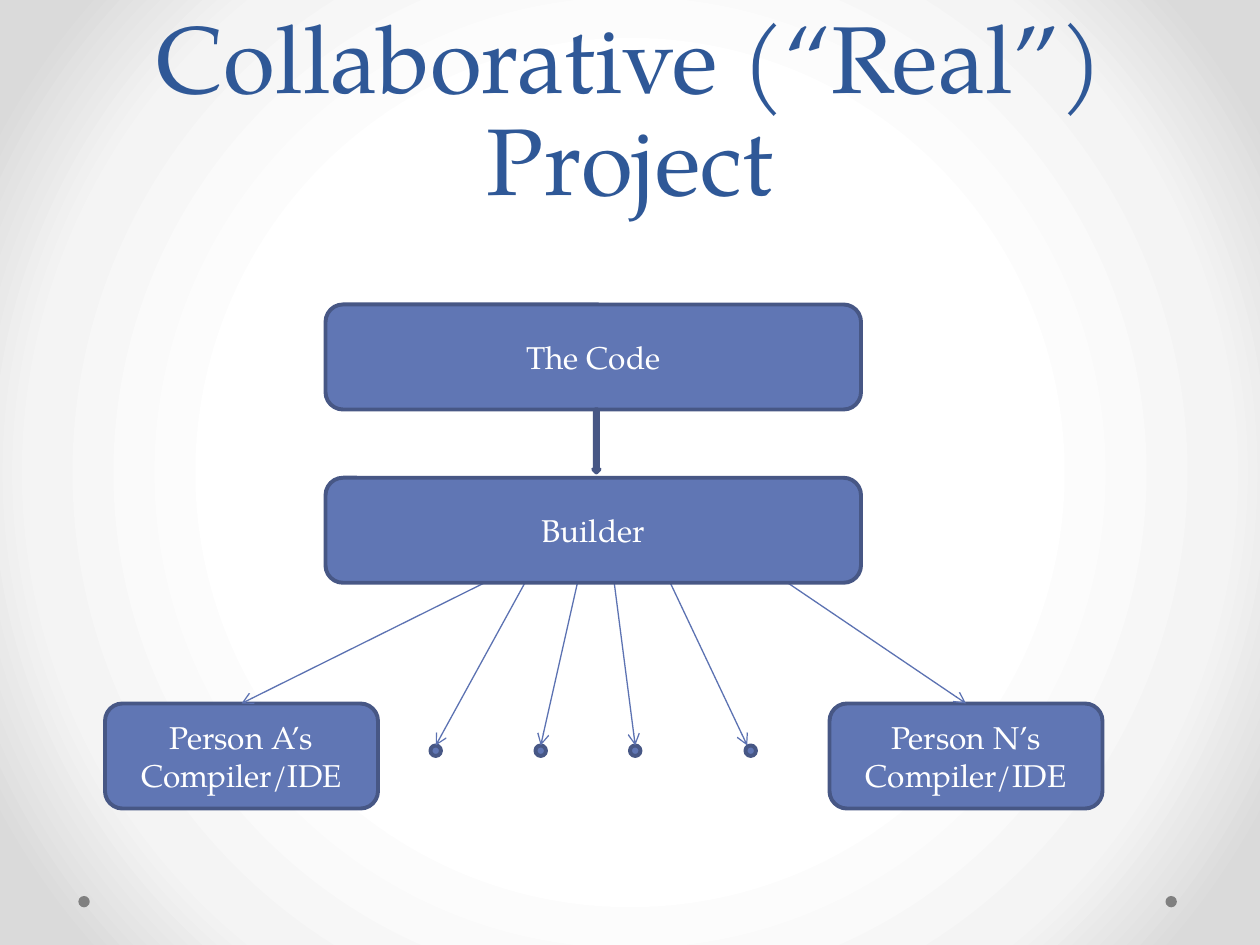
import pptx
import pptx.dml.color
import pptx.enum.shapes
import pptx.enum.text
import pptx.oxml
import pptx.oxml.ns
import pptx.util
from lxml import etree

Pt = pptx.util.Pt
RGBColor = pptx.dml.color.RGBColor
Shape = pptx.enum.shapes.MSO_SHAPE

FONT = "TeX Gyre Pagella"
TITLE_BLUE = RGBColor(0x2F, 0x58, 0x97)
FILL_BLUE = RGBColor(0x60, 0x76, 0xB4)
OUTLINE_BLUE = RGBColor(0x47, 0x57, 0x85)
ARROW_BLUE = RGBColor(0x5C, 0x72, 0xB2)
GREY = RGBColor(0x80, 0x80, 0x80)
WHITE = RGBColor(0xFF, 0xFF, 0xFF)
BACKGROUND_STOPS = [
    (50, WHITE),
    (76, RGBColor(0xF4, 0xF4, 0xF4)),
    (92, RGBColor(0xDA, 0xDA, 0xDA)),
]

BOX_HEIGHT = 60
BUILD_TOP = 273
PERSON_TOP = 402
DOT_TOP = 426
DOT_SIZE = 6


def add_element(parent, tag, **attributes):
    return etree.SubElement(parent, pptx.oxml.ns.qn(tag), attributes)


def set_background(slide):
    """Fill the background with a gradient that radiates from the centre."""
    slide.background.fill.gradient()
    gradient = slide.element.find(".//" + pptx.oxml.ns.qn("a:gradFill"))
    for child in list(gradient):
        gradient.remove(child)
    stops = add_element(gradient, "a:gsLst")
    for percent, color in BACKGROUND_STOPS:
        stop = add_element(stops, "a:gs", pos=str(percent * 1000))
        add_element(stop, "a:srgbClr", val=str(color))
    circle = add_element(gradient, "a:path", path="circle")
    add_element(circle, "a:fillToRect", l="50000", t="50000", r="50000", b="50000")


def format_paragraph(paragraph, size, color):
    paragraph.alignment = pptx.enum.text.PP_ALIGN.CENTER
    paragraph.font.name = FONT
    paragraph.font.size = Pt(size)
    paragraph.font.color.rgb = color


def set_title(slide, text):
    title = slide.shapes.title
    title.left, title.top, title.width, title.height = Pt(36), Pt(0), Pt(648), Pt(126)
    frame = title.text_frame
    frame.text = text
    frame.auto_size = pptx.enum.text.MSO_AUTO_SIZE.NONE
    frame.vertical_anchor = pptx.enum.text.MSO_ANCHOR.BOTTOM
    paragraph = frame.paragraphs[0]
    paragraph.line_spacing = Pt(58)
    format_paragraph(paragraph, 54, TITLE_BLUE)


def add_filled_shape(slide, kind, left, top, width, height,
                     fill=FILL_BLUE, outline=OUTLINE_BLUE):
    shape = slide.shapes.add_shape(kind, Pt(left), Pt(top), Pt(width), Pt(height))
    shape.shadow.inherit = False
    shape.fill.solid()
    shape.fill.fore_color.rgb = fill
    if outline is None:
        shape.line.fill.background()
    else:
        shape.line.color.rgb = outline
        shape.line.width = Pt(2.25)
    return shape


def add_box(slide, text, left, top, width):
    box = add_filled_shape(slide, Shape.ROUNDED_RECTANGLE, left, top, width, BOX_HEIGHT)
    frame = box.text_frame
    frame.text = text
    frame.word_wrap = True
    frame.vertical_anchor = pptx.enum.text.MSO_ANCHOR.MIDDLE
    format_paragraph(frame.paragraphs[0], 18, WHITE)
    return box


def add_arrow(slide, start_x, end_x, end_y):
    """Draw a thin arrow down from the lower edge of the build box."""
    arrow = slide.shapes.add_connector(
        pptx.enum.shapes.MSO_CONNECTOR.STRAIGHT,
        Pt(start_x), Pt(BUILD_TOP + BOX_HEIGHT), Pt(end_x), Pt(end_y))
    arrow.line.color.rgb = ARROW_BLUE
    arrow.line.width = Pt(0.75)
    line = arrow._element.spPr.find(pptx.oxml.ns.qn("a:ln"))
    add_element(line, "a:tailEnd", type="arrow")
    add_element(arrow._element.spPr, "a:effectLst")
    return arrow


def main():
    presentation = pptx.Presentation()
    presentation.slide_width = Pt(720)
    presentation.slide_height = Pt(540)
    slide = presentation.slides.add_slide(presentation.slide_layouts[5])
    set_background(slide)

    for left in (666, 44.8):
        add_filled_shape(slide, Shape.OVAL, left, 512, 6.5, 6.5, GREY, None)
    set_title(slide, "Collaborative (“Real”) Project")

    add_box(slide, "The Code", 186, 174, 306)
    for name, left, start_x in (("A", 60, 277), ("N", 474, 450)):
        person = add_box(slide, f"Person {name}’s Compiler/IDE", left, PERSON_TOP, 156)
        arrow = add_arrow(slide, start_x, left + 78, PERSON_TOP)
        arrow.end_connect(person, 0)

    for left, start_x, end_x in ((246, 300, 249), (306, 330, 309),
                                 (360, 351, 363), (426, 383, 427)):
        add_filled_shape(slide, Shape.OVAL, left, DOT_TOP, DOT_SIZE, DOT_SIZE)
        add_arrow(slide, start_x, end_x, DOT_TOP)

    add_box(slide, "Builder", 186, BUILD_TOP, 306)
    add_filled_shape(slide, Shape.DOWN_ARROW, 339, 234, 3.6, 36)

    presentation.save("out.pptx")


if __name__ == "__main__":
    main()
